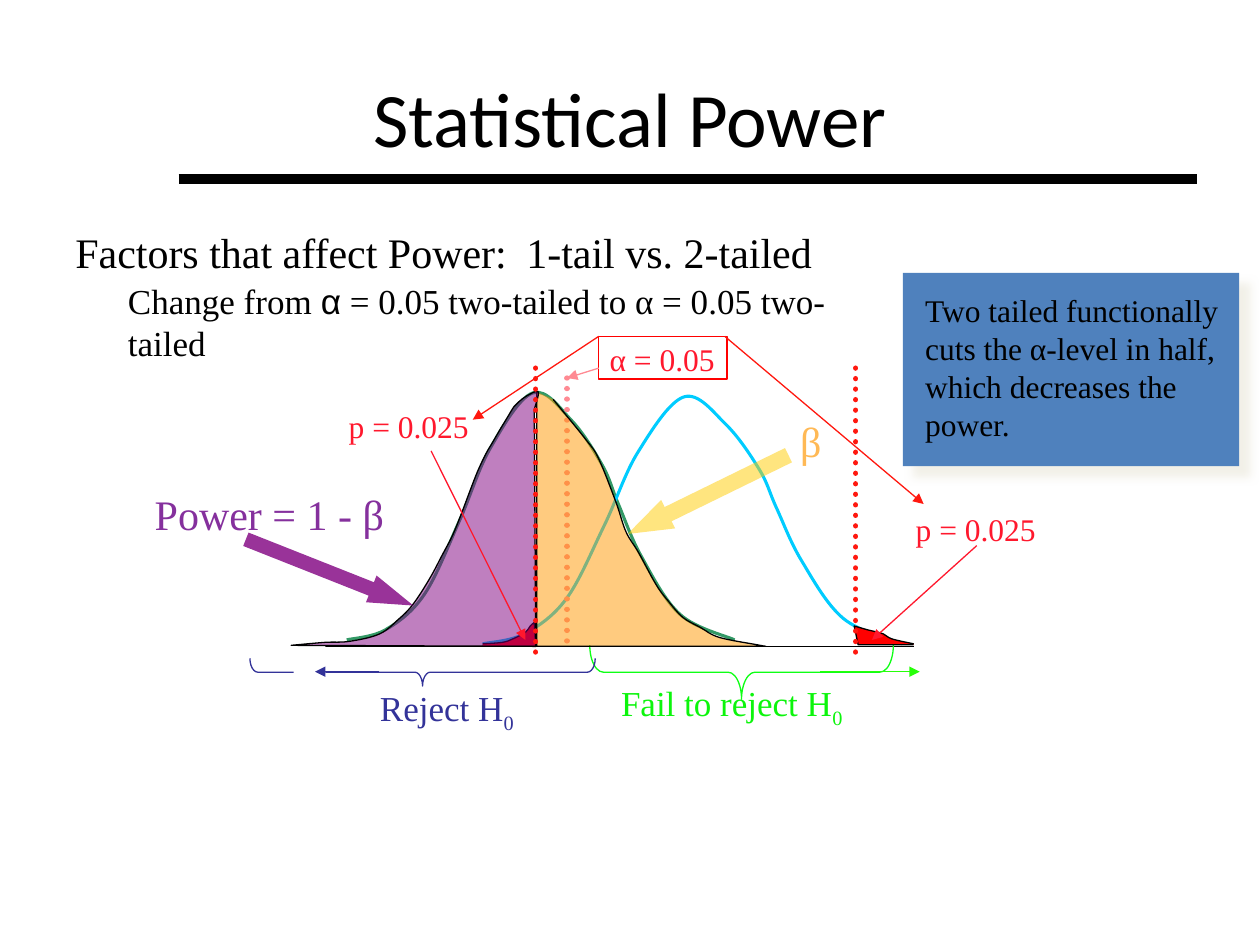
from lxml import etree
from pptx import Presentation
from pptx import util as u
from pptx.dml.color import RGBColor
from pptx.enum import dml, shapes, text
from pptx.oxml.ns import qn

SERIF = "Times New Roman"
RED, PALE_RED, ROSE = "FF180F", "FF8A93", "FF182D"
BLUE, GREEN, PURPLE = "333399", "27FF09", "800080"

BELL = [(0, 1), (.1, .96), (.2, .82), (.29, .53), (.37, .24), (.48, .02), (.58, .13),
        (.66, .31), (.7, .46), (.76, .67), (.86, .9), (1, 1)]
POWER_EDGE = [(5.69, .64), (5.77, .28), (5.54, .36), (5.38, .48), (5.28, .58), (5.11, .86),
              (5, 1.04), (4.85, 1.3), (4.72, 1.52), (4.55, 1.88), (4.39, 2.29), (4.22, 2.74),
              (4.04, 3.18), (3.84, 3.56), (3.63, 3.96), (3.4, 4.34), (3.2, 4.62), (2.97, 4.85),
              (2.57, 5.16), (1.96, 5.31), (1.47, 5.33), (.79, 5.39)]
BETA_EDGE = [(6.07, .43), (6.73, 1.24), (6.99, 1.63), (7.34, 2.51), (7.54, 3.1), (7.8, 3.53),
             (8.15, 4.17), (8.41, 4.52), (8.69, 4.83), (9.04, 5.03), (9.42, 5.23),
             (10.19, 5.38), (10.36, 5.41)]
LEFT_TAIL = [(4.65, 5.36), (5.05, 5.33), (5.26, 5.26), (5.51, 5.13), (5.61, 5), (5.69, 4.93)]
RIGHT_TAIL = [(13.34, 5.36), (12.9, 5.26), (12.73, 5.16), (12.55, 5.11), (12.42, 5.08),
              (12.14, 5)]


def color(value):
    """Turn a hex string into a colour."""
    return RGBColor.from_string(value)


def style(shape, fill=None, opacity=100, line=None, width=.75):
    """Set fill, opacity and outline of a shape and drop its shadow."""
    shape.shadow.inherit = False
    if fill:
        shape.fill.solid()
        shape.fill.fore_color.rgb = color(fill)
        if opacity < 100:
            tint = shape._element.spPr.find(qn("a:solidFill"))[0]
            etree.SubElement(tint, qn("a:alpha"), val=str(opacity * 1000))
    else:
        shape.fill.background()
    if line:
        shape.line.color.rgb = color(line)
        shape.line.width = u.Pt(width)
    else:
        shape.line.fill.background()
    return shape


def add_shape(slide, kind, left, top, width, height, rotation=0, adjust=(), **look):
    """Place a preset shape."""
    shape = slide.shapes.add_shape(kind, u.Cm(left), u.Cm(top), u.Cm(width), u.Cm(height))
    shape.rotation = rotation
    for index, value in enumerate(adjust):
        shape.adjustments[index] = value
    return style(shape, **look)


def add_line(slide, start, end, stroke="000000", width=.75, arrow=False, dotted=False):
    """Draw a straight line, optionally dotted or with an arrowhead at its end."""
    line = slide.shapes.add_connector(shapes.MSO_CONNECTOR.STRAIGHT,
                                      *(u.Cm(value) for value in (*start, *end)))
    line.line.color.rgb = color(stroke)
    line.line.width = u.Pt(width)
    if dotted:
        line.line.dash_style = dml.MSO_LINE.ROUND_DOT
        line.line._get_or_add_ln().set("cap", "rnd")
    if arrow:
        etree.SubElement(line.line._get_or_add_ln(), qn("a:tailEnd"), type="triangle")
    etree.SubElement(line._element.spPr, qn("a:effectLst"))


def add_text(slide, left, top, width, height, *runs, size=18, font=SERIF, ink="000000",
             align=None, middle=False, wrap=True, spacing=None):
    """Place one paragraph; a run is a string or a (string, font, baseline) tuple."""
    box = slide.shapes.add_textbox(u.Cm(left), u.Cm(top), u.Cm(width), u.Cm(height))
    frame = box.text_frame
    frame.word_wrap = wrap
    if middle:
        frame.vertical_anchor = text.MSO_ANCHOR.MIDDLE
    paragraph = frame.paragraphs[0]
    paragraph.alignment = align
    paragraph.line_spacing = spacing
    for item in runs:
        words, face, baseline = (item, font, 0) if isinstance(item, str) else item
        run = paragraph.add_run()
        run.text = words
        run.font.name, run.font.size = face, u.Pt(size)
        run.font.color.rgb = color(ink)
        if baseline:
            run._r.get_or_add_rPr().set("baseline", str(baseline * 1000))


def bezier_points(knots):
    """List two control points and an end point for each step between knots."""
    padded = [knots[0], *knots, knots[-1]]
    points = []
    for a, b, c, d in zip(padded, padded[1:], padded[2:], padded[3:]):
        points += [tuple(q + (r - p) / 6 for p, q, r in zip(a, b, c)),
                   tuple(r - (s - q) / 6 for q, r, s in zip(b, c, d)), c]
    return points


def add_curve(slide, left, top, knots, corners=(), close=False, **look):
    """Draw a Bezier outline through the knots, followed by straight corners."""
    curve = bezier_points(knots)
    points = [(u.Cm(left + x), u.Cm(top + y)) for x, y in [knots[0], *curve, *corners]]
    builder = slide.shapes.build_freeform(*points[0])
    builder.add_line_segments(points[1:], close=close)
    shape = builder.convert_to_shape()
    segments = list(shape._element.iter(qn("a:lnTo")))[:len(curve)]
    for first, second, third in zip(*[iter(segments)] * 3):
        bend = etree.Element(qn("a:cubicBezTo"))
        first.addprevious(bend)
        for segment in (first, second, third):
            bend.append(segment[0])
            segment.getparent().remove(segment)
    return style(shape, **look)


def add_heading(slide, left, top, width, height):
    """Place the title, its rule and the two lines of introduction."""
    add_line(slide, (left + 2.33, top + 2.85), (left + width, top + 2.85), width=6)
    add_text(slide, left, top, width, height, "Statistical Power", size=44, font="Calibri",
             align=text.PP_ALIGN.CENTER, middle=True)
    add_text(slide, left, top + 3.69, 9.25, 1.27, "Factors that affect Power:", size=24)
    add_text(slide, left + 9.09, top + 3.69, 7.87, 1.27, "1-tail vs. 2-tailed", size=24)
    add_text(slide, left + 1.06, top + 4.75, 14.6, 1.96, "Change from ", ("α", "Arial", 0),
             " = 0.05 two-tailed to α = 0.05 two-tailed", size=20)


def add_bells(slide, left, top):
    """Draw both bell curves, the baseline and the one-tailed critical value."""
    for x, y, width, stroke in ((1.91, .2, 7.82, "339966"), (4.65, .28, 8.46, "00CCFF")):
        add_curve(slide, left + x, top + y, [(width * a, 5.08 * b) for a, b in BELL],
                  line=stroke, width=1.75)
    add_line(slide, (left + 1.27, top + 5.41), (left + 13.34, top + 5.41))
    add_line(slide, (left + 6.35, top), (left + 6.35, top + 5.36), PALE_RED, 3, dotted=True)


def add_areas(slide, left, top):
    """Shade the areas and draw the two-tailed critical values."""
    areas = ((LEFT_TAIL, [(5.72, 5.41), (4.65, 5.41)], "FF0000", 100, False),
             (BETA_EDGE, [(5.74, 5.41), (5.74, .28)], "FF9900", 50, False),
             (POWER_EDGE, [(5.72, 5.41)], PURPLE, 50, True),
             (RIGHT_TAIL, [(12.22, 5.38), (13.34, 5.38)], "FF0000", 100, False))
    for edge, corners, fill, opacity, close in areas:
        add_curve(slide, left, top, edge, corners, close, fill=fill, opacity=opacity,
                  line="000000")
    for x in (5.72, 12.17):
        add_line(slide, (left + x, top - .2), (left + x, top + 5.59), RED, 3, dotted=True)


def add_labels(slide, left, top):
    """Name the areas and point at them."""
    kinds = shapes.MSO_SHAPE
    add_shape(slide, kinds.LEFT_ARROW, left + 7.39, top + 2.03, 3.61, .64, 333.9,
              (.5, 1.42), fill="FFCC00", opacity=50)
    add_shape(slide, kinds.RIGHT_ARROW, left - .25, top + 3.63, 3.63, .58, 21.6,
              (.5, 1.57), fill=PURPLE, opacity=80)
    add_shape(slide, kinds.RECTANGLE, left + 6.99, top - .84, 2.59, .86, line="FF0000")
    add_text(slide, left + 10.8, top + .64, 1.47, 1.27, "β", size=24, ink="FFB955")
    add_text(slide, left - 2.21, top + 2.11, 5.23, 1.3, "Power = 1 - β", size=24,
             ink="85309D", wrap=False)
    add_text(slide, left + 6.96, top - .89, 2.69, 1.02, "α = 0.05", ink=ROSE, wrap=False)
    for x, y in ((1.7, .46), (13.13, 2.54)):
        add_text(slide, left + x, top + y, 3.23, 1.02, "p = 0.025", ink=ROSE)
    for x1, y1, x2, y2, stroke in ((6.99, -.84, 4.45, .84, RED), (9.53, -.84, 13.54, 2.54, RED),
                                   (3.61, 1.47, 5.51, 5.28, ROSE),
                                   (14.61, 3.38, 12.5, 5.28, ROSE),
                                   (6.99, -.2, 6.35, 0, PALE_RED)):
        add_line(slide, (left + x1, top + y1), (left + x2, top + y2), stroke, arrow=True)


def add_decisions(slide, left, top):
    """Mark the ranges that reject and keep the null hypothesis."""
    for x, depth, span, bend, stroke in ((9.87, 1.09, 6.12, .25, "0EFF15"),
                                         (3.44, .56, 6.96, .28, BLUE)):
        add_shape(slide, shapes.MSO_SHAPE.LEFT_BRACE, left + x - depth / 2,
                  top + .85 - span / 2, depth, span, 270, (bend, .5), line=stroke)
    add_shape(slide, shapes.MSO_SHAPE.RECTANGLE, left + .84, top + .2, .64, .84, fill="FFFFFF")
    for start, end, stroke in ((11.46, 13.46, GREEN), (2.57, 1.27, BLUE)):
        add_line(slide, (left + start, top + .84), (left + end, top + .84), stroke, arrow=True)
    null = ("0", SERIF, -25)
    add_text(slide, left + 7.19, top + 1.23, 6.99, .69, "Fail to reject H", null, size=20,
             ink="0CF50C", spacing=.5)
    add_text(slide, left + 2.33, top + 1.02, 3.61, 1.08, "Reject H", null, size=20, ink=BLUE)


def add_callout(slide, left, top, width, height):
    """Place the shadowed note on two-tailed tests."""
    panel = add_shape(slide, shapes.MSO_SHAPE.RECTANGLE, left, top, width, height,
                      fill="4F81BD")
    effects = panel._element.spPr.find(qn("a:effectLst"))
    shadow = etree.SubElement(effects, qn("a:outerShdw"), blurRad=str(u.Pt(5)),
                              dist=str(u.Pt(8.5)), dir="2700000", algn="tl")
    tint = etree.SubElement(shadow, qn("a:srgbClr"), val="EEECE1")
    etree.SubElement(tint, qn("a:alpha"), val="75000")
    add_text(slide, left + .2, top + .25, width - .23, height - .6,
             "Two tailed functionally cuts the α-level in half, which decreases the power.")


def main():
    """Build the slide and save it."""
    presentation = Presentation()
    presentation.slide_width, presentation.slide_height = u.Cm(25.4), u.Cm(19.05)
    slide = presentation.slides.add_slide(presentation.slide_layouts[6])
    add_heading(slide, 1.27, .76, 22.86, 3.18)
    add_bells(slide, 5.08, 7.62)
    add_decisions(slide, 5.08, 12.7)
    add_areas(slide, 5.08, 7.62)
    add_callout(slide, 18.2, 5.5, 6.78, 3.9)
    add_labels(slide, 5.08, 7.62)
    presentation.save("out.pptx")


if __name__ == "__main__":
    main()
